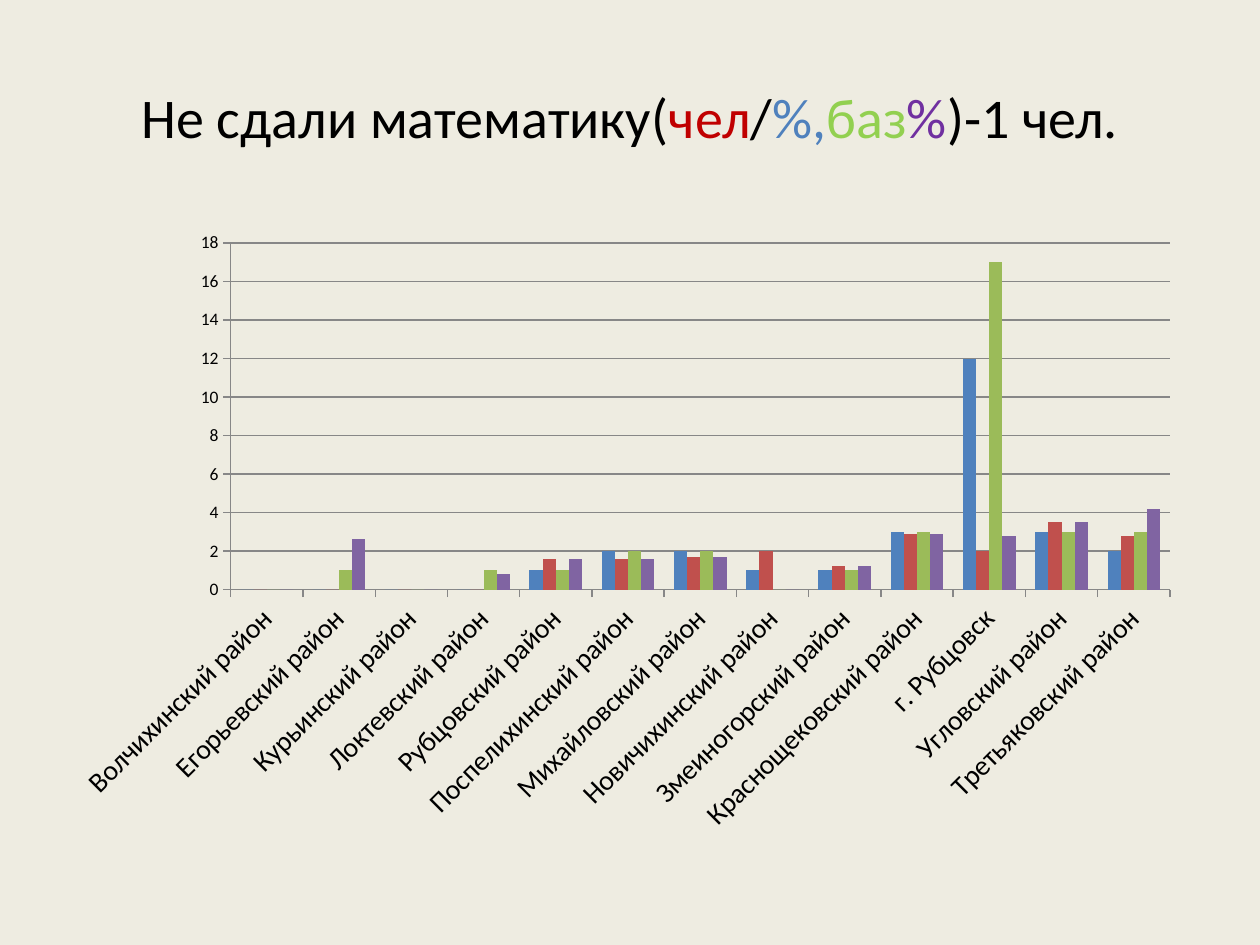
from pptx import Presentation
from pptx.chart.data import CategoryChartData
from pptx.dml.color import RGBColor
from pptx.enum.chart import XL_CHART_TYPE, XL_TICK_MARK
from pptx.enum.text import MSO_ANCHOR, PP_ALIGN
from pptx.util import Cm, Pt

COLUMNS = XL_CHART_TYPE.COLUMN_CLUSTERED
OUTSIDE, NO_TICK = XL_TICK_MARK.OUTSIDE, XL_TICK_MARK.NONE
MIDDLE, CENTER = MSO_ANCHOR.MIDDLE, PP_ALIGN.CENTER
FONT = "Calibri"
BLACK, GRAY, CREAM = "000000", "878787", "EEECE1"

TITLE = [
    ("Не сдали математику(", BLACK),
    ("чел", "C00000"),
    ("/", BLACK),
    ("%,", "4F81BD"),
    ("баз", "92D050"),
    ("%", "7030A0"),
    (")-1 чел.", BLACK),
]
DISTRICTS = [
    "Волчихинский район", "Егорьевский район", "Курьинский район",
    "Локтевский район", "Рубцовский район", "Поспелихинский район",
    "Михайловский район", "Новичихинский район", "Змеиногорский район",
    "Краснощековский район", "г. Рубцовск", "Угловский район",
    "Третьяковский район",
]
SERIES = [
    ("Series 1", "4F81BD", [0, 0, 0, 0, 1, 2, 2, 1, 1, 3, 12, 3, 2]),
    ("Series 2", "C0504D", [0, 0, 0, 0, 1.6, 1.6, 1.7, 2, 1.2, 2.9, 2, 3.5, 2.8]),
    ("Series 3", "9BBB59", [0, 1, 0, 1, 1, 2, 2, 0, 1, 3, 17, 3, 3]),
    ("Series 4", "8064A2", [0, 2.6, 0, 0.8, 1.6, 1.6, 1.7, 0, 1.2, 2.9, 2.8, 3.5, 4.2]),
]


def color(hex_text):
    """Turn a hex string into a colour."""
    return RGBColor.from_string(hex_text)


def style_font(font, size, hex_text=BLACK):
    """Set the typeface, size and colour of a font."""
    font.name = FONT
    font.size = Pt(size)
    font.bold = False
    font.color.rgb = color(hex_text)


def style_line(line):
    """Give a chart line its grey hairline look."""
    line.color.rgb = color(GRAY)
    line.width = Pt(0.75)


def add_title(page, left, top, width, height):
    """Place the multicoloured title in its box."""
    frame = page.shapes.add_textbox(left, top, width, height).text_frame
    frame.word_wrap = True
    frame.vertical_anchor = MIDDLE
    para = frame.paragraphs[0]
    para.alignment = CENTER
    for text, hex_text in TITLE:
        span = para.add_run()
        span.text = text
        style_font(span.font, 32, hex_text)


def style_axes(chart):
    """Style both axes and the gridlines."""
    for axis, size in ((chart.category_axis, 16), (chart.value_axis, 10)):
        axis.major_tick_mark = OUTSIDE
        axis.minor_tick_mark = NO_TICK
        style_font(axis.tick_labels.font, size)
        style_line(axis.format.line)
    values = chart.value_axis
    values.has_major_gridlines = True
    style_line(values.major_gridlines.format.line)
    values.tick_labels.number_format = "0"
    values.tick_labels.number_format_is_linked = False


def add_district_chart(page, left, top, width, height):
    """Place the clustered column chart of districts in its box."""
    chart_data = CategoryChartData()
    chart_data.categories = DISTRICTS
    for name, _, values in SERIES:
        chart_data.add_series(name, values)
    chart = page.shapes.add_chart(COLUMNS, left, top, width, height, chart_data).chart
    chart.has_title = False
    chart.has_legend = False
    style_font(chart.font, 10)
    plot = chart.plots[0]
    plot.gap_width = 150
    plot.overlap = 0
    plot.vary_by_categories = False
    for series, (_, hex_text, _) in zip(plot.series, SERIES):
        series.format.fill.solid()
        series.format.fill.fore_color.rgb = color(hex_text)
        series.invert_if_negative = False
    style_axes(chart)


def main():
    """Build the slide and save the deck."""
    deck = Presentation()
    deck.slide_width, deck.slide_height = Cm(25.4), Cm(19.05)
    page = deck.slides.add_slide(deck.slide_layouts[6])
    page.background.fill.solid()
    page.background.fill.fore_color.rgb = color(CREAM)
    margin = Cm(1.27)
    width = deck.slide_width - 2 * margin
    add_title(page, margin, Cm(0.76), width, Cm(3.18))
    add_district_chart(page, margin, Cm(4.45), width, Cm(12.57))
    deck.save("out.pptx")


if __name__ == "__main__":
    main()
